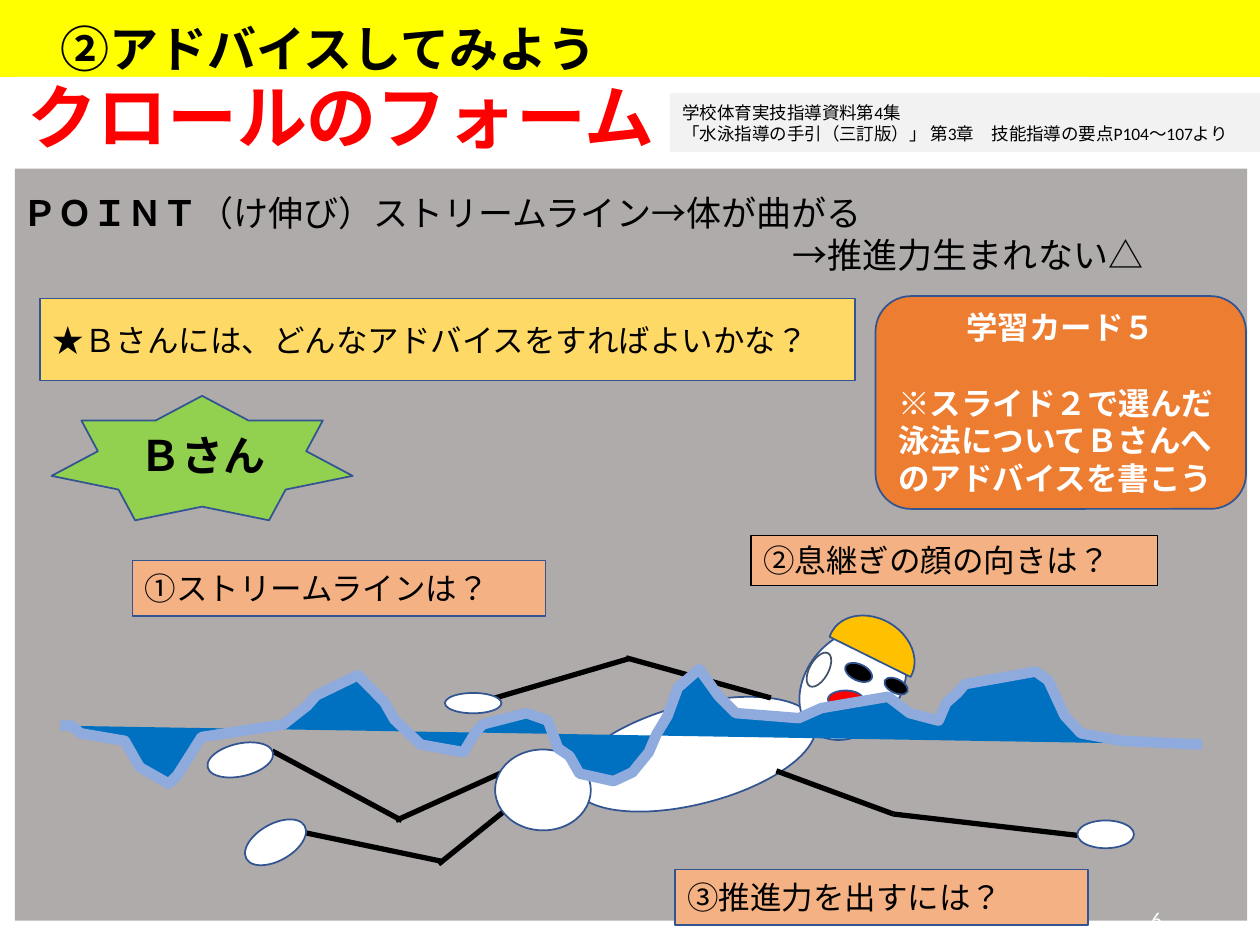
"""Build a swimming lesson slide about giving advice on front crawl form."""
import pptx
import pptx.util
import pptx.dml.color
import pptx.enum.lang
import pptx.enum.shapes
import pptx.enum.text
import pptx.oxml
import pptx.oxml.ns

Cm, Pt = pptx.util.Cm, pptx.util.Pt
SHAPE = pptx.enum.shapes.MSO_SHAPE
ALIGN = pptx.enum.text.PP_ALIGN
ANCHOR = pptx.enum.text.MSO_ANCHOR
JAPANESE = pptx.enum.lang.MSO_LANGUAGE_ID.JAPANESE
UNIT = 2.54

COLORS = {
    "black": "000000", "white": "FFFFFF", "red": "FF0000", "yellow": "FFFF00",
    "panel": "AFABAB", "navy": "325491", "slate": "44546A", "cap": "FFC000",
    "green": "92D050", "water": "0070C0", "foam": "8FAADC", "question": "FFD966",
    "hint": "F4B183", "source": "F2F2F2", "card": "ED7D31",
}

TITLE = "②アドバイスしてみよう"

PANELS = [
    (SHAPE.RECTANGLE, (0.12, 1.34, 9.78, 5.97), "panel", None, {}),
    (SHAPE.RECTANGLE, (-0.02, 0, 10.02, 0.61), "yellow", None, {}),
]
POINT_BOX = (0.16, 1.47, 9.34, 0.67)
POINT_LINES = [
    {"runs": [("ＰＯＩＮＴ", True), ("（け伸び）ストリームライン→体が曲がる", False)]},
    {"runs": [("→推進力生まれない△", False)], "indent": 6.11},
]
NUMBER_BOX = (7.07, 7.09, 2.25, 0.4)
NUMBER_LINES = [{"runs": [("6", False)], "alignment": ALIGN.RIGHT}]

TORSO = [(SHAPE.OVAL, (4.52, 5.59, 1.98, 0.79), "white", "navy", {"rotation": 345.6})]
LIMBS = [
    [(2.37, 6.6), (3.52, 6.84)],
    [(3.48, 6.86), (4.07, 6.38)],
    [(2.16, 5.96), (3.19, 6.51)],
    [(3.14, 6.51), (4.03, 6.11)],
    [(6.16, 6.12), (7.09, 6.46), (8.55, 6.63)],
    [(3.93, 5.54), (4.99, 5.23)],
    [(4.97, 5.22), (6.12, 5.54)],
]
SWIMMER = [
    (SHAPE.OVAL, (6.28, 5.06, 0.98, 0.74), "white", "navy", {"rotation": 310.4}),
    (SHAPE.RIGHT_TRIANGLE, (7.03, 5.61, 0.13, 0.14), "white", "black", {"rotation": 260}),
    (SHAPE.RECTANGLE, (0.12, 0.61, 8.62, 0.61), "white", None,
     {"text": "クロールのフォーム", "size": 40, "name": "Arial", "color": "red", "bold": True}),
    (SHAPE.OVAL, (6.57, 5.48, 0.28, 0.14), "red", "navy", {}),
    (SHAPE.OVAL, (6.7, 5.27, 0.23, 0.13), "black", "navy", {"rotation": 25.1}),
    (SHAPE.CHORD, (6.63, 4.83, 0.57, 0.72), "cap", "navy",
     {"rotation": 120.3, "adjustments": (49.25, 162)}),
    (SHAPE.OVAL, (6.35, 5.24, 0.3, 0.15), "white", "slate", {"rotation": 299.1}),
    (SHAPE.OVAL, (3.53, 5.5, 0.45, 0.16), "white", "navy", {}),
    (SHAPE.OVAL, (8.55, 6.51, 0.45, 0.22), "white", "navy", {}),
    (SHAPE.OVAL, (1.64, 5.9, 0.53, 0.26), "white", "navy", {"rotation": 347.3}),
    (SHAPE.STAR_7_POINT, (0.41, 3.14, 2.39, 0.99), "green", "navy",
     {"text": "Ｂさん", "size": 24, "bold": True, "alignment": ALIGN.CENTER}),
    (SHAPE.OVAL, (1.92, 6.54, 0.53, 0.29), "white", "navy", {"rotation": 330.6}),
    (SHAPE.OVAL, (3.93, 5.95, 0.76, 0.64), "white", "navy", {"rotation": 0.6}),
]
WAVE = [
    (954, 591), (890, 588), (858, 582), (845, 568), (832, 540), (822, 533), (766, 543),
    (760, 550), (751, 558), (745, 572), (722, 566), (705, 553), (652, 562), (634, 570),
    (584, 566), (570, 552), (555, 531), (538, 546), (530, 568), (521, 583), (515, 597),
    (502, 613), (487, 620), (460, 614), (452, 600), (443, 594), (435, 572), (418, 566),
    (383, 575), (377, 582), (368, 597), (334, 591), (313, 571), (305, 557), (284, 536),
    (251, 552), (244, 560), (225, 575), (160, 585), (141, 615), (134, 622), (111, 609),
    (99, 588), (64, 582), (57, 576), (48, 576),
]
NEAR_EYE = [(SHAPE.OVAL, (7.01, 5.39, 0.2, 0.11), "black", "navy", {"rotation": 26.3})]

CARD_LINES = [
    {"runs": [("学習カード５", True)], "alignment": ALIGN.CENTER, "space_after": Pt(21.5)},
    {"runs": [("※スライド２で選んだ泳法についてＢさんへのアドバイスを書こう", True)]},
]
SOURCE_LINES = [
    {"runs": [("学校体育実技指導資料第4集", False)]},
    {"runs": [("「水泳指導の手引（三訂版）」 第3章　技能指導の要点P104～107より", False)]},
]
CAPTIONS = [
    (SHAPE.RECTANGLE, (0.32, 2.37, 6.47, 0.65), "question", "navy",
     {"text": "★Ｂさんには、どんなアドバイスをすればよいかな？", "name": "Arial"}),
    (SHAPE.RECTANGLE, (1.05, 4.45, 3.28, 0.44), "hint", "navy",
     {"text": "①ストリームラインは？"}),
    (SHAPE.RECTANGLE, (5.96, 4.25, 3.23, 0.4), "hint", "black",
     {"text": "②息継ぎの顔の向きは？", "name": "Arial", "anchor": ANCHOR.TOP, "width": 0.75}),
    (SHAPE.RECTANGLE, (5.36, 6.9, 3.28, 0.44), "hint", "navy",
     {"text": "③推進力を出すには？"}),
    (SHAPE.RECTANGLE, (5.32, 0.74, 4.68, 0.47), "source", None,
     {"lines": SOURCE_LINES, "size": 10}),
    (SHAPE.ROUNDED_RECTANGLE, (6.95, 2.35, 2.94, 1.69), "card", "navy",
     {"lines": CARD_LINES, "color": "white"}),
]


def lengths(values):
    return [Cm(round(value * UNIT, 2)) for value in values]


def rgb(name):
    return pptx.dml.color.RGBColor.from_string(COLORS[name])


def assign(target, values):
    for key, value in values.items():
        setattr(target, key, value)


def write(shape, lines, size=18, name="Calibri", color="black", anchor=ANCHOR.MIDDLE, **frame_values):
    frame = shape.text_frame
    assign(frame, {"word_wrap": True, "auto_size": pptx.enum.text.MSO_AUTO_SIZE.NONE,
                   "vertical_anchor": anchor, **frame_values})
    for index, line in enumerate(lines):
        paragraph = frame.add_paragraph() if index else frame.paragraphs[0]
        assign(paragraph, {"alignment": line.get("alignment", ALIGN.LEFT),
                           "space_after": line.get("space_after", Pt(0))})
        if "indent" in line:
            paragraph._p.get_or_add_pPr().set("marL", str(lengths([line["indent"]])[0]))
        for text, bold in line["runs"]:
            run = paragraph.add_run()
            run.text = text
            assign(run.font, {"size": Pt(size), "name": name, "bold": bold,
                              "language_id": JAPANESE})
            run.font.color.rgb = rgb(color)


def paint(shape, fill, line, width=1):
    shape.shadow.inherit = False
    shape.fill.solid()
    shape.fill.fore_color.rgb = rgb(fill)
    if line:
        shape.line.color.rgb = rgb(line)
        shape.line.width = Pt(width)
    else:
        shape.line.fill.background()


def add_shapes(slide, items):
    for kind, box, fill, line, options in items:
        options = dict(options)
        shape = slide.shapes.add_shape(kind, *lengths(box))
        paint(shape, fill, line, options.pop("width", 1))
        shape.rotation = options.pop("rotation", 0)
        for index, value in enumerate(options.pop("adjustments", ())):
            shape.adjustments[index] = value
        if "text" in options:
            run = (options.pop("text"), options.pop("bold", False))
            options["lines"] = [{"runs": [run], "alignment": options.pop("alignment", ALIGN.LEFT)}]
        if options:
            write(shape, **options)


def add_limbs(slide):
    for joints in LIMBS:
        for start, end in zip(joints, joints[1:]):
            connector = slide.shapes.add_connector(
                pptx.enum.shapes.MSO_CONNECTOR.STRAIGHT, *lengths(start + end))
            connector.line.color.rgb = rgb("black")
            connector.line.width = Pt(3)
            properties = connector.element.find(pptx.oxml.ns.qn("p:spPr"))
            properties.append(properties.makeelement(pptx.oxml.ns.qn("a:effectLst"), {}))


def add_wave(slide):
    builder = slide.shapes.build_freeform(*WAVE[0], scale=Cm(UNIT) / 100)
    builder.add_line_segments(WAVE[1:], close=False)
    paint(builder.convert_to_shape(), "water", "foam", 6)


def add_title(slide):
    title = slide.shapes.title
    assign(title, dict(zip(("left", "top", "width", "height"), lengths((0.38, 0.06, 8.93, 0.64)))))
    write(title, [{"runs": [(TITLE, True)]}], size=28)
    title.element.getparent().append(title.element)


def main():
    presentation = pptx.Presentation()
    assign(presentation, {"slide_width": Cm(25.4), "slide_height": Cm(19.05)})
    slide = presentation.slides.add_slide(presentation.slide_layouts[5])
    add_shapes(slide, PANELS)
    write(slide.shapes.add_textbox(*lengths(POINT_BOX)), POINT_LINES, size=20, name="Arial",
          anchor=ANCHOR.TOP, margin_left=Cm(0.05), margin_right=Cm(0.05))
    write(slide.shapes.add_textbox(*lengths(NUMBER_BOX)), NUMBER_LINES, size=12, color="white")
    add_shapes(slide, TORSO)
    add_limbs(slide)
    add_shapes(slide, SWIMMER)
    add_wave(slide)
    add_shapes(slide, NEAR_EYE)
    add_title(slide)
    add_shapes(slide, CAPTIONS)
    presentation.save("out.pptx")


if __name__ == "__main__":
    main()
